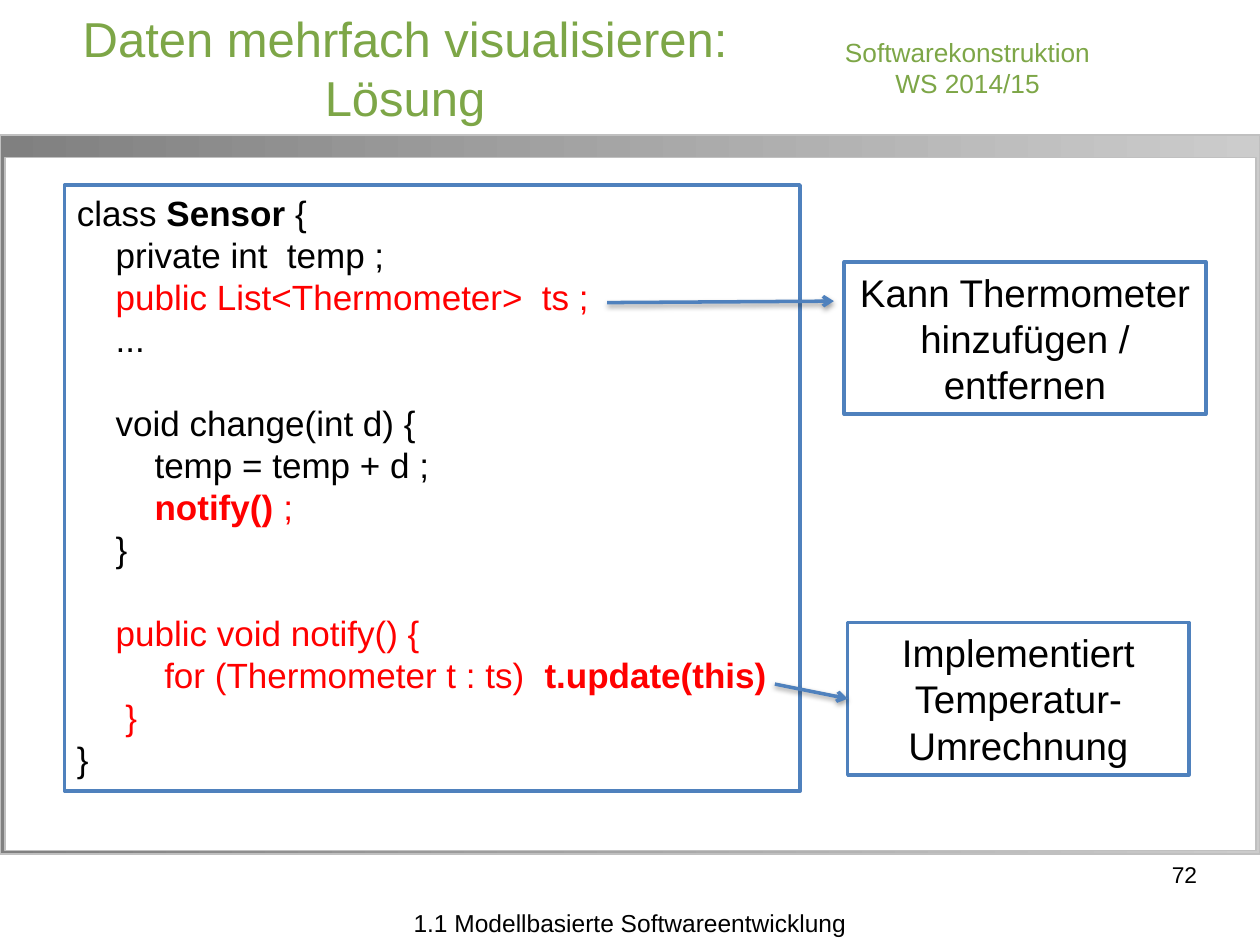
from lxml.etree import SubElement
from pptx import Presentation
from pptx.dml.color import RGBColor
from pptx.enum.shapes import MSO_CONNECTOR, MSO_SHAPE
from pptx.enum.text import MSO_ANCHOR, PP_ALIGN
from pptx.oxml.ns import qn
from pptx.util import Cm, Pt

BLACK, RED, GREEN, BLUE = "000000", "FF0000", "7DA647", "4F81BD"
WHITE, GREY = "FFFFFF", "C0C0C0"


def rgb(code):
    return RGBColor.from_string(code)


def style(para, size, color, align, pitch):
    para.alignment = align
    para.line_spacing = Pt(pitch)
    for run in para.runs:
        run.font.name = "Arial"
        run.font.size = Pt(size)
        run.font.color.rgb = rgb(color)


deck = Presentation()
deck.slide_width, deck.slide_height = Cm(25.4), Cm(19.05)
slide = deck.slides.add_slide(deck.slide_layouts[5])
shapes = slide.shapes

panels = []
for place, edge, width in [
    ((0, 2.72, 25.4, 14.5), GREY, 0.75),
    ((0.1, 3.18, 25.22, 13.97), GREY, 0.75),
    ((1.3, 3.73, 14.83, 12.22), BLUE, 2),
    ((17.02, 5.28, 7.29, 3.07), BLUE, 2),
    ((17.09, 12.55, 6.88, 3.07), BLUE, 2),
]:
    panel = shapes.add_shape(MSO_SHAPE.RECTANGLE, *map(Cm, place))
    panel.shadow.inherit = False
    panel.fill.solid()
    panel.fill.fore_color.rgb = rgb(WHITE)
    panel.line.color.rgb = rgb(edge)
    panel.line.width = Pt(width)
    panels.append(panel)
band, page, code, add, update = panels

band.fill.gradient()
band.fill.gradient_angle = 0
for stop, color in zip(band.fill.gradient_stops, ["808080", "CCCCCC"]):
    stop.color.rgb = rgb(color)

title = shapes.title
title.left, title.top, title.width, title.height = map(Cm, (0, 0, 16.33, 2.72))
frame = title.text_frame
frame.text = "Daten mehrfach visualisieren: Lösung"
frame.word_wrap = True
frame.vertical_anchor = MSO_ANCHOR.MIDDLE
frame.margin_left = frame.margin_right = frame.margin_top = frame.margin_bottom = 0
style(frame.paragraphs[0], 28, GREEN, PP_ALIGN.CENTER, 33.5)

for place, text, size, color, align, pitch, inset in [
    ((16.33, 0.64, 6.35, 2.72), "Softwarekonstruktion\nWS 2014/15",
     15, GREEN, PP_ALIGN.CENTER, 17.7, 0.1),
    ((6.12, 18.31, 13.16, 0.58), "1.1 Modellbasierte Softwareentwicklung",
     14, BLACK, PP_ALIGN.CENTER, 16.5, 0),
    ((18.21, 17.35, 5.92, 0.79), "72", 13, BLACK, PP_ALIGN.RIGHT, 15.5, 0),
]:
    frame = shapes.add_textbox(*map(Cm, place)).text_frame
    frame.word_wrap = True
    frame.margin_left = frame.margin_right = Cm(inset)
    frame.margin_top = frame.margin_bottom = Cm(inset)
    frame.text = text
    for para in frame.paragraphs:
        style(para, size, color, align, pitch)

for panel, text in [
    (add, "Kann Thermometer hinzufügen / entfernen"),
    (update, "Implementiert Temperatur-Umrechnung"),
]:
    frame = panel.text_frame
    frame.word_wrap = True
    frame.text = text
    style(frame.paragraphs[0], 22, BLACK, PP_ALIGN.CENTER, 26.3)

lines = [
    (BLACK, 0, [("class ", False), ("Sensor ", True), ("{", False)]),
    (BLACK, 0, [("    private int  temp ;", False)]),
    (RED, 0, [("    public List<Thermometer>  ts ;", False)]),
    (BLACK, 0, [("    ...", False)]),
    (BLACK, 24, [("    void change(int d) {", False)]),
    (BLACK, 0, [("        temp = temp + d ;", False)]),
    (RED, 0, [("        notify() ", True), (";", False)]),
    (BLACK, 0, [("    }", False)]),
    (RED, 24, [("    public void notify() {", False)]),
    (RED, 0, [("         for (Thermometer t : ts)  ", False), ("t.update(this)", True)]),
    (RED, 0, [("     }", False)]),
    (BLACK, 0, [("}", False)]),
]
frame = code.text_frame
frame.word_wrap = True
frame.vertical_anchor = MSO_ANCHOR.TOP
for i, (color, gap, parts) in enumerate(lines):
    para = frame.add_paragraph() if i else frame.paragraphs[0]
    for text, bold in parts:
        run = para.add_run()
        run.text = text
        run.font.bold = bold
    style(para, 20, color, PP_ALIGN.LEFT, 24)
    if gap:
        para.space_before = Pt(gap)

for ends, goal in [
    ((12.24, 6.1, 16.81, 6.07), None),
    ((15.62, 13.79, 17.09, 14.08), update),
]:
    arrow = shapes.add_connector(MSO_CONNECTOR.STRAIGHT, *map(Cm, ends))
    if goal:
        arrow.end_connect(goal, 1)
    arrow.line.color.rgb = rgb(BLUE)
    arrow.line.width = Pt(2)
    props = arrow._element.spPr
    SubElement(props.find(qn("a:ln")), qn("a:tailEnd"), type="arrow")
    effects = SubElement(props, qn("a:effectLst"))
    shadow = SubElement(effects, qn("a:outerShdw"), blurRad=str(Pt(3.1)),
                        dist=str(Pt(1.6)), dir="5400000", rotWithShape="0")
    tint = SubElement(shadow, qn("a:srgbClr"), val=BLACK)
    SubElement(tint, qn("a:alpha"), val="38000")

deck.save("out.pptx")
